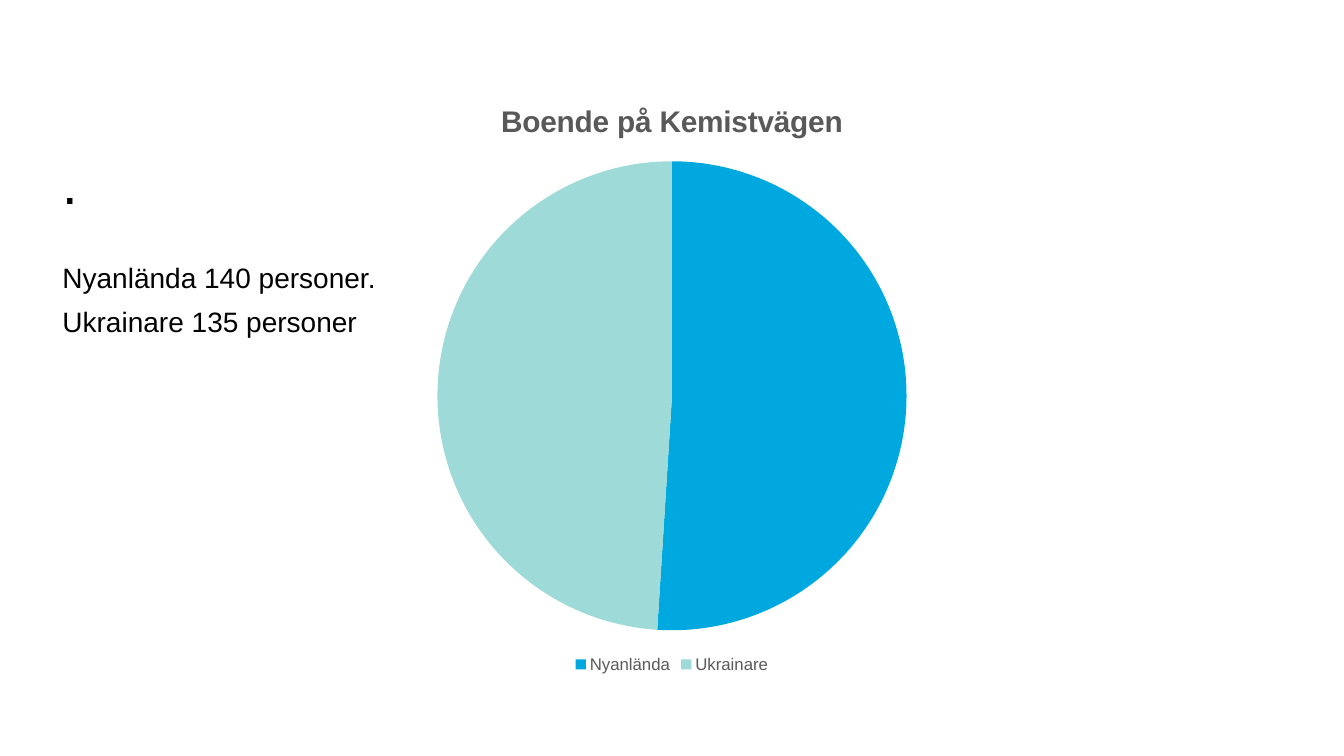
from pptx import Presentation
from pptx.chart.data import CategoryChartData
from pptx.dml.color import RGBColor
from pptx.enum.chart import XL_CHART_TYPE, XL_LEGEND_POSITION
from pptx.enum.text import MSO_ANCHOR, PP_ALIGN
from pptx.util import Inches, Pt

FONT = "Arial"
BLACK, GREY = "000000", "595959"
SHARES = {"Nyanlända": (51, "00A8E0"), "Ukrainare": (49, "9DDAD8")}
CHART_TITLE = "Boende på Kemistvägen"


def color(value):
    return RGBColor.from_string(value)


def style(font, size, hex_color, bold=False):
    font.name = FONT
    font.size = Pt(size)
    font.bold = bold
    font.color.rgb = color(hex_color)


def place(sp, left, top, width, height):
    sp.left, sp.top = Inches(left), Inches(top)
    sp.width, sp.height = Inches(width), Inches(height)


def write(sp, lines, size, anchor, line_spacing=1.0, space_after=0):
    tf = sp.text_frame
    tf.word_wrap = True
    tf.vertical_anchor = anchor
    tf.text = "\n".join(lines)
    for p in tf.paragraphs:
        p.alignment = PP_ALIGN.LEFT
        p.line_spacing = line_spacing
        p.space_before = Pt(0)
        p.space_after = Pt(space_after)
        for r in p.runs:
            style(r.font, size, BLACK)


def add_title(s, text):
    sp = s.shapes.title
    place(sp, 0.52, 1.31, 10.81, 1.08)
    write(sp, [text], 40, MSO_ANCHOR.MIDDLE, line_spacing=0.9)


def add_body(s, lines):
    sp = s.shapes.add_textbox(Inches(0.52), Inches(2.54), Inches(10.82), Inches(4.24))
    write(sp, lines, 20, MSO_ANCHOR.TOP, space_after=7)


def add_pie(s, title, shares):
    data = CategoryChartData()
    data.categories = list(shares)
    data.add_series(title, [value for value, _ in shares.values()])
    chart = s.shapes.add_chart(
        XL_CHART_TYPE.PIE, Inches(2.22), Inches(0.79), Inches(8.89), Inches(5.93), data
    ).chart
    style(chart.font, 10, BLACK)

    chart.has_title = True
    tf = chart.chart_title.text_frame
    tf.text = title
    style(tf.paragraphs[0].runs[0].font, 21.3, GREY, bold=True)
    chart.chart_title.include_in_layout = False

    chart.has_legend = True
    chart.legend.position = XL_LEGEND_POSITION.BOTTOM
    chart.legend.include_in_layout = False
    style(chart.legend.font, 12, GREY)

    plot = chart.plots[0]
    plot.vary_by_categories = True
    for i, (_, hex_color) in enumerate(shares.values()):
        fill = plot.series[0].points[i].format.fill
        fill.solid()
        fill.fore_color.rgb = color(hex_color)


def main():
    prs = Presentation()
    prs.slide_width, prs.slide_height = Inches(13.33), Inches(7.5)
    s = prs.slides.add_slide(prs.slide_layouts[5])
    add_title(s, ".")
    add_body(s, ["Nyanlända 140 personer.", "Ukrainare 135 personer"])
    add_pie(s, CHART_TITLE, SHARES)
    prs.save("out.pptx")


if __name__ == "__main__":
    main()
